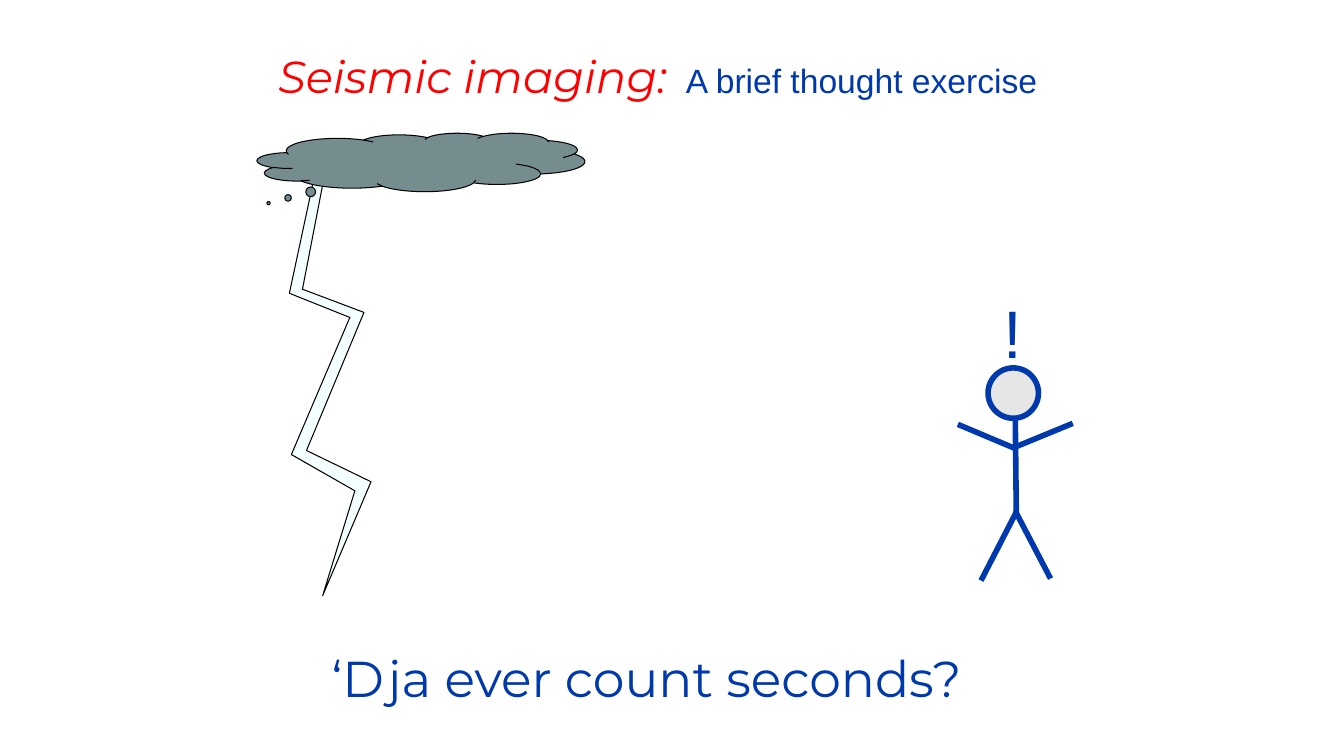
from lxml import etree
from pptx import Presentation
from pptx.dml.color import RGBColor
from pptx.enum.shapes import MSO_CONNECTOR, MSO_SHAPE
from pptx.enum.text import MSO_ANCHOR, PP_ALIGN
from pptx.oxml.ns import qn
from pptx.util import Pt

PX = 9144
STRAIGHT = MSO_CONNECTOR.STRAIGHT
CLOUD = MSO_SHAPE.CLOUD_CALLOUT
OVAL = MSO_SHAPE.OVAL
TOP = MSO_ANCHOR.TOP
LEFT = PP_ALIGN.LEFT

COLORS = {
    "red": "FF0000",
    "blue": "0039AC",
    "bolt": "F3FFFF",
    "cloud": "768D8F",
    "head": "E7E6E6",
    "outline": "000000",
}


def rgb(name):
    return RGBColor.from_string(COLORS[name])


def place(part, box):
    part.left, part.top, part.width, part.height = (n * PX for n in box)


def paint(part, fill, line, weight):
    part.shadow.inherit = False
    part.fill.solid()
    part.fill.fore_color.rgb = rgb(fill)
    part.line.color.rgb = rgb(line)
    part.line.width = Pt(weight)


def write(part, pieces):
    frame = part.text_frame
    frame.word_wrap = True
    frame.vertical_anchor = TOP
    paragraph = frame.paragraphs[0]
    paragraph.alignment = LEFT
    paragraph.line_spacing = 1.0
    for words, font, size, color, italic in pieces:
        run = paragraph.add_run()
        run.text = words
        run.font.name = font
        run.font.size = Pt(size)
        run.font.color.rgb = rgb(color)
        run.font.italic = italic


def add_heading(slide, box):
    heading = slide.shapes.title
    place(heading, box)
    write(heading, [
        ("Seismic imaging:", "Montserrat", 32, "red", True),
        ("  ", "Arial", 24, "red", False),
        ("A brief thought exercise", "Arial", 24, "blue", False),
    ])


def add_lightning(slide, box):
    left, top, _, _ = box
    corners = [(27, 0), (0, 126), (60, 150), (2, 286), (65, 322), (33, 426),
               (81, 313), (17, 282), (74, 145), (13, 122), (36, 3)]
    points = [(left + x, top + y) for x, y in corners]
    builder = slide.shapes.build_freeform(*points[0], scale=PX)
    builder.add_line_segments(points[1:], close=True)
    paint(builder.convert_to_shape(), "bolt", "outline", 0.75)


def add_cloud(slide, box):
    cloud = slide.shapes.add_shape(CLOUD, *(n * PX for n in box))
    cloud.adjustments[0] = -0.465
    cloud.adjustments[1] = 0.699
    paint(cloud, "cloud", "outline", 0.75)


def add_observer(slide, box):
    left, top, _, _ = box
    observer = slide.shapes.add_group_shape().shapes
    head = observer.add_shape(
        OVAL, (left + 30) * PX, (top + 81) * PX, 50 * PX, 50 * PX)
    paint(head, "head", "blue", 4)
    limbs = {
        "body": (57, 130, 58, 227),
        "left arm": (57, 161, 0, 137),
        "right arm": (58, 159, 114, 136),
        "left leg": (58, 224, 23, 292),
        "right leg": (57, 223, 92, 290),
    }
    for x1, y1, x2, y2 in limbs.values():
        limb = observer.add_connector(
            STRAIGHT, (left + x1) * PX, (top + y1) * PX,
            (left + x2) * PX, (top + y2) * PX)
        limb.line.color.rgb = rgb("blue")
        limb.line.width = Pt(4)
        etree.SubElement(limb._element.spPr, qn("a:effectLst"))
    surprise = observer.add_textbox(
        (left + 35) * PX, top * PX, 39 * PX, 90 * PX)
    write(surprise, [("!", "Arial", 48, "blue", False)])


def add_question(slide, box):
    question = slide.shapes.add_textbox(*(n * PX for n in box))
    write(question, [
        ("‘Dja ever count seconds?", "Montserrat", 36, "blue", False)])


def main():
    deck = Presentation()
    deck.slide_width = 1333 * PX
    deck.slide_height = 750 * PX
    slide = deck.slides.add_slide(deck.slide_layouts[5])
    add_heading(slide, (266, 43, 812, 64))
    add_lightning(slide, (287, 165, 81, 426))
    add_cloud(slide, (255, 132, 325, 58))
    add_observer(slide, (950, 284, 114, 292))
    add_question(slide, (319, 637, 722, 71))
    deck.save("out.pptx")


if __name__ == "__main__":
    main()
